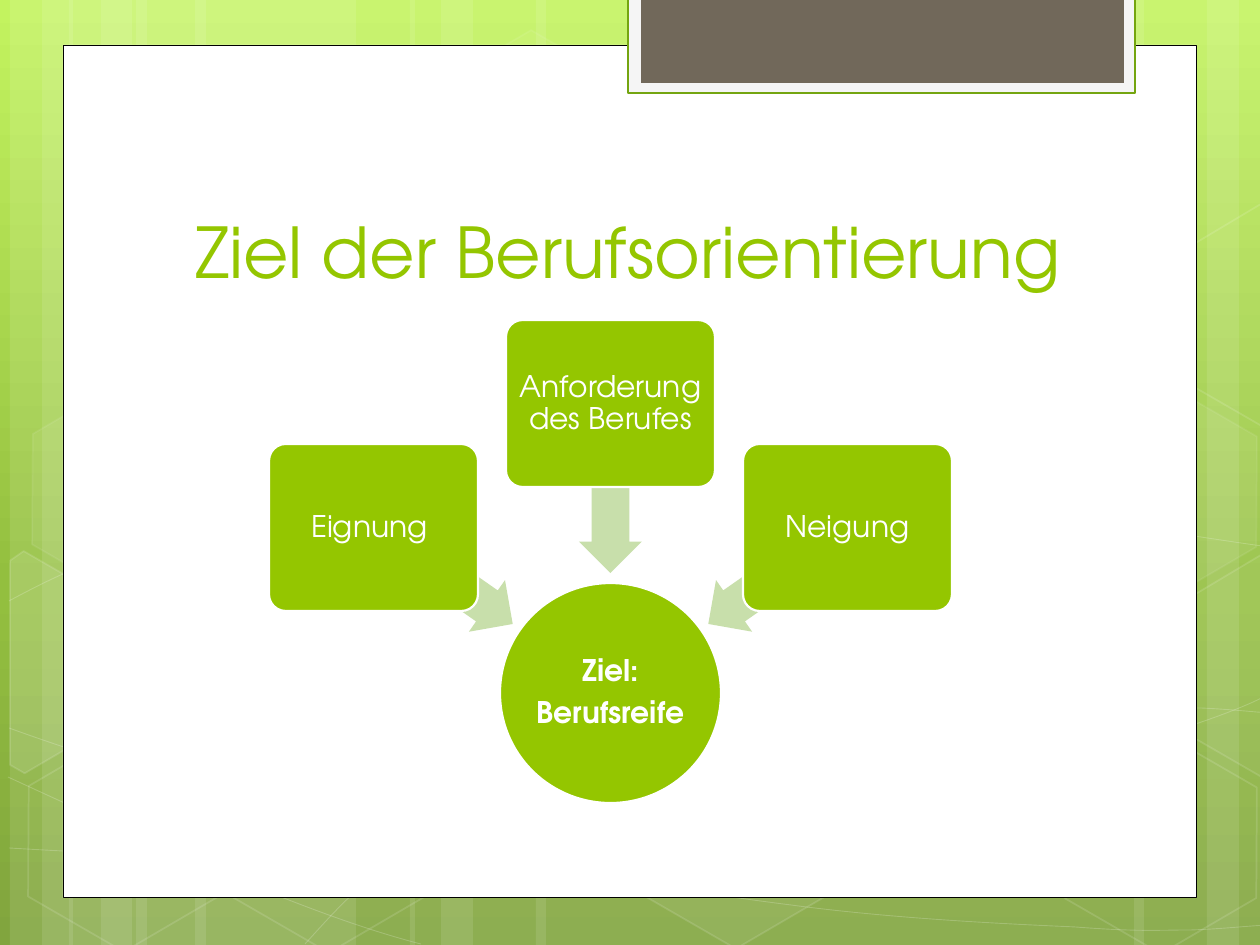
from collections import namedtuple
from copy import deepcopy
from dataclasses import dataclass

from lxml.etree import SubElement
from pptx import Presentation
from pptx.dml.color import RGBColor
from pptx.enum.shapes import MSO_SHAPE
from pptx.enum.text import MSO_ANCHOR, PP_ALIGN
from pptx.oxml.ns import qn
from pptx.util import Pt

SCALE = 914400 / 126
Box = namedtuple("Box", "x y w h")


@dataclass(frozen=True)
class Theme:
    """Colours, font and type sizes of the slide."""
    sky: tuple = ((0, "C3F35F"), (0.62, "93BF3F"), (1, "81A53E"))
    white: str = "FFFFFF"
    black: str = "000000"
    green: str = "94C600"
    pale: str = "C8DFAB"
    edge: str = "74A510"
    mist: str = "F5F5F5"
    stone: str = "71685A"
    font: str = "TeX Gyre Adventor"
    head: int = 40
    body: int = 17


THEME = Theme()

STRIPS = ((136, 220), (10, 63), (42, 105), (195, 220), (69, 63), (101, 105),
          (924, 220), (1207, 63), (1134, 105), (536, 388), (410, 63), (441, 105))

CURVES = (
    ((9, 848), (77, 852), (145, 856), (239, 854), (334, 853), (451, 850), (577, 838),
     (703, 825), (882, 801), (998, 777), (1113, 753), (1231, 716), (1269, 694)),
    ((9, 601), (45, 582), (82, 562), (152, 543), (224, 524), (326, 499), (437, 488),
     (549, 478), (685, 478), (824, 488), (963, 498), (1193, 537), (1269, 547)),
    ((8, 777), (160, 847), (311, 916), (421, 944)),
    ((9, 728), (48, 742), (88, 756), (161, 776), (234, 795), (344, 827), (450, 848),
     (554, 869), (687, 892), (791, 905), (896, 919), (1008, 924), (1075, 927),
     (1140, 932), (1158, 930), (1191, 930), (1223, 929), (1246, 926), (1269, 925)),
    ((305, 944), (328, 919), (350, 893), (381, 871), (411, 848), (454, 823), (489, 805),
     (524, 788), (546, 780), (592, 767), (638, 755), (722, 737), (766, 728),
     (811, 719), (818, 719), (857, 717), (896, 713), (958, 709), (1000, 708),
     (1045, 707), (1116, 708), (1116, 708), (1144, 708), (1173, 708), (1201, 708),
     (1223, 709), (1245, 711), (1256, 712), (1268, 713), (1264, 712), (1268, 713)),
)

HEXES = ((421, 45, 4, 8), (626, 742, 6, 12), (14, 745, 0, 12), (18, 393, 7, 8),
         (219, 746, 0, 12), (949, 571, 10, 12), (1051, 747, 0, 12), (1051, 396, 7, 8))

WEST = ((0, 15), (7, 0), (119, 0), (173, 97), (119, 192), (102, 192))
EAST = ((0, 95), (53, 0), (65, 0), (171, 182), (165, 191), (55, 191))
CUTS = ((WEST, -42, 578, 10), (EAST, 1155, 559, 4), (EAST, 1155, 208, 0))


def px(size):
    """Turn px into EMU."""
    return round(size * SCALE)


def tint(fill, color, alpha):
    """Make a fill solid, with an opacity in percent."""
    fill.solid()
    fill.fore_color.rgb = RGBColor.from_string(color)
    if alpha < 100:
        node = fill._xPr.find(".//" + qn("a:srgbClr"))
        SubElement(node, qn("a:alpha")).set("val", str(alpha * 1000))


def paint(shape, color=None, alpha=100, line=None, width=1, fade=100):
    """Set the fill and line of a shape and take away its shadow."""
    shape.shadow.inherit = False
    if color and alpha:
        tint(shape.fill, color, alpha)
    else:
        shape.fill.background()
    if line:
        tint(shape.line.fill, line, fade)
        shape.line.width = Pt(width)
    else:
        shape.line.fill.background()
    return shape


def form(slide, kind, x, y, w, h, **look):
    """Add a painted preset shape."""
    return paint(slide.shapes.add_shape(kind, px(x), px(y), px(w), px(h)), **look)


def trace(slide, x, y, dots, close, **look):
    """Add a painted outline through dots relative to a corner."""
    spots = [(px(x + a), px(y + b)) for a, b in dots]
    pen = slide.shapes.build_freeform(*spots[0])
    pen.add_line_segments(spots[1:], close=close)
    return paint(pen.convert_to_shape(), **look)


def curve(slide, box, knots, **look):
    """Add a chain of cubic Bezier curves."""
    shape = trace(slide, box.x, box.y, knots[::3], False, **look)
    for i, leg in enumerate(list(shape._element.iter(qn("a:lnTo")))):
        leg.tag = qn("a:cubicBezTo")
        for slot, (x, y) in enumerate(knots[3 * i + 1:3 * i + 3]):
            dot = deepcopy(leg[-1])
            dot.set("x", str(px(box.x + x) - shape.left))
            dot.set("y", str(px(box.y + y) - shape.top))
            leg.insert(slot, dot)


def write(shape, text, size, color, bold=False, inset=None):
    """Put centred text into a shape."""
    frame = shape.text_frame
    frame.text = text
    frame.word_wrap = True
    frame.vertical_anchor = MSO_ANCHOR.MIDDLE
    if inset is not None:
        frame.margin_left = frame.margin_right = px(inset)
        frame.margin_top = frame.margin_bottom = px(inset)
    for para in frame.paragraphs:
        para.alignment = PP_ALIGN.CENTER
        for run in para.runs:
            run.font.name = THEME.font
            run.font.size = Pt(size)
            run.font.bold = bold
            run.font.color.rgb = RGBColor.from_string(color)
    return frame


def label(shape, text, inset, bold=False):
    """Write body text with tight lines into a diagram shape."""
    for para in write(shape, text, THEME.body, THEME.white, bold, inset).paragraphs:
        para.line_spacing = 0.9
        para.space_after = Pt(6)


def shade(slide):
    """Fill the background with the three-stop gradient."""
    fill = slide.background.fill
    fill.gradient()
    fill.gradient_angle = 270
    stops = slide._element.find(".//" + qn("a:gsLst"))
    stops.insert(1, deepcopy(stops[0]))
    for stop, (place, color) in zip(fill.gradient_stops, THEME.sky):
        stop.position = place
        stop.color.rgb = RGBColor.from_string(color)


def backdrop(slide, box):
    """Draw the strips, curves and hexagons behind the panel."""
    white = THEME.white
    for x, w in STRIPS:
        form(slide, MSO_SHAPE.RECTANGLE, box.x + x, box.y, w, box.h, color=white, alpha=10)
    for knots in CURVES:
        curve(slide, box, knots, line=white, width=0.5, fade=20)
    for x, y, alpha, fade in HEXES:
        tile = form(slide, MSO_SHAPE.HEXAGON, box.x + x, box.y + y, 220, 192,
                    color=white, alpha=alpha, line=white, fade=fade)
        tile.rotation = 30
        tile.adjustments[0] = 0.285
        tile.adjustments[1] = 1.155
    for dots, x, y, alpha in CUTS:
        tile = trace(slide, box.x + x, box.y + y, dots, True,
                     color=white, alpha=alpha, line=white, fade=12)
        tile.rotation = 30


def panel(slide, box):
    """Draw the white panel and the tab hanging over its top edge."""
    kind = MSO_SHAPE.RECTANGLE
    form(slide, kind, *box, color=THEME.white, line=THEME.black, width=0.5)
    top = box.y - 48
    form(slide, kind, box.x + 565, top, 507, 96, color=THEME.mist, line=THEME.edge, width=1.25)
    form(slide, kind, box.x + 578, top, 483, 86, color=THEME.stone)


def title(slide, box):
    """Write the slide title at the bottom of its box."""
    area = slide.shapes.add_textbox(*map(px, box))
    frame = write(area, "Ziel der Berufsorientierung", THEME.head, THEME.green)
    frame.vertical_anchor = MSO_ANCHOR.BOTTOM


def diagram(slide, box):
    """Draw three cards whose arrows lead to the goal circle."""
    look = dict(color=THEME.green, line=THEME.white, width=1.25)
    goal = form(slide, MSO_SHAPE.OVAL, box.x + 231, box.y + 263, 221, 220, **look)
    label(goal, "Ziel:\nBerufsreife", 1, bold=True)
    for i, text in enumerate(("Eignung ", "Anforderung des Berufes", "Neigung")):
        side = abs(i - 1)
        arrow = form(slide, MSO_SHAPE.LEFT_ARROW, box.x + 90 + 167 * i,
                     box.y + 137 + 87 * side, 169, 63, color=THEME.pale)
        arrow.rotation = 215 + 55 * i
        arrow.adjustments[0] = 0.6
        card = form(slide, MSO_SHAPE.ROUNDED_RECTANGLE, box.x + 237 * i,
                    box.y + 124 * side, 209, 167, **look)
        card.adjustments[0] = 0.1
        label(card, text, 5)


def main():
    """Build the slide and save it."""
    deck = Presentation()
    deck.slide_width, deck.slide_height = px(1260), px(945)
    slide = deck.slides.add_slide(deck.slide_layouts[6])
    shade(slide)
    backdrop(slide, Box(0, 0, 1260, 945))
    panel(slide, Box(63, 45, 1134, 853))
    title(slide, Box(144, 141, 968, 158))
    diagram(slide, Box(269, 320, 683, 484))
    deck.save("out.pptx")


if __name__ == "__main__":
    main()
